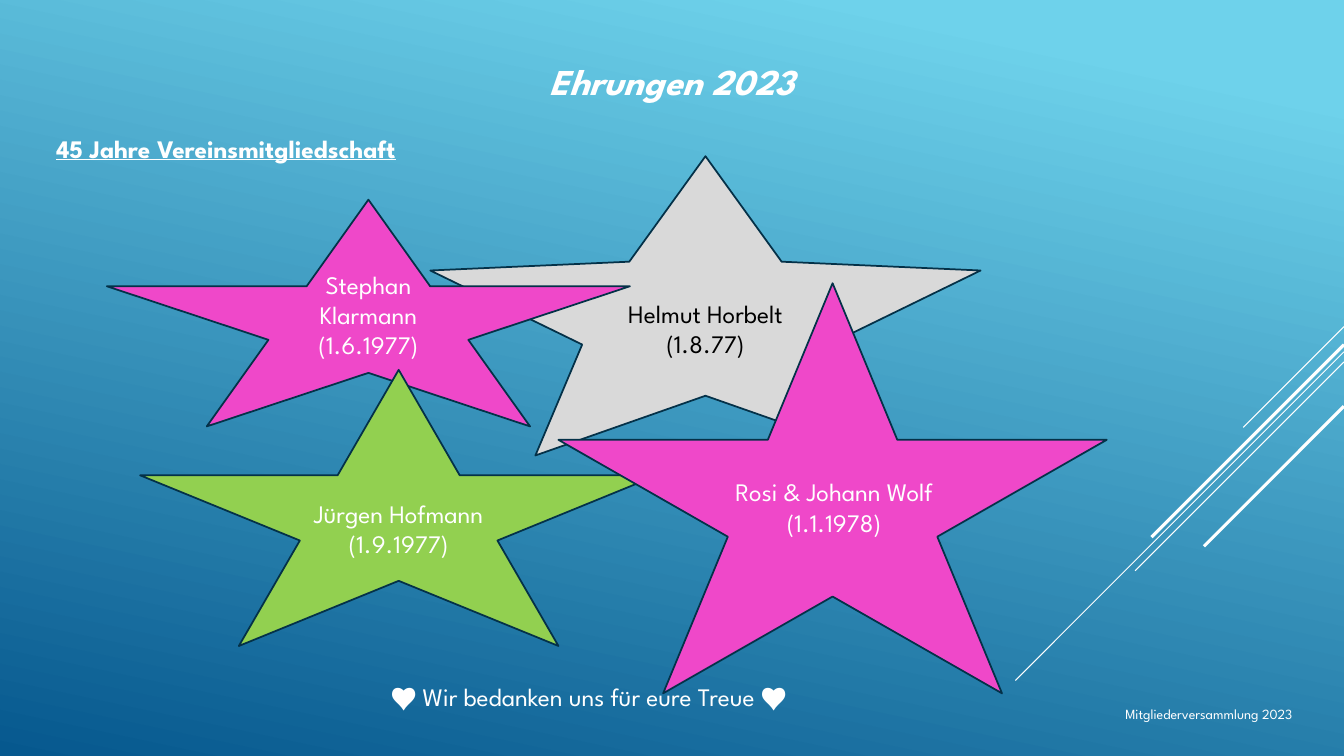
from dataclasses import dataclass

import pptx
import pptx.dml.color
import pptx.enum.shapes
import pptx.enum.text
import pptx.oxml
import pptx.util

Pt = pptx.util.Pt
Align = pptx.enum.text.PP_ALIGN
Anchor = pptx.enum.text.MSO_ANCHOR
Fit = pptx.enum.text.MSO_AUTO_SIZE

FONT = "League Spartan"
WHITE, BLACK, NAVY = "FFFFFF", "000000", "043148"
PINK, GREEN, GREY = "EF48C9", "92D050", "D9D9D9"
WIDE, HIGH = 960, 540


@dataclass
class Ray:
    top: float
    run: float
    width: float


@dataclass
class Star:
    box: tuple[float, float, float, float]
    fill: str
    text: str = ""
    ink: str = WHITE
    adj: float = 0.191
    lift: float = 0


@dataclass
class Label:
    box: tuple[float, float, float, float]
    text: str
    size: float = 18
    align: Align = Align.CENTER
    bold: bool = False
    slant: bool = False
    under: bool = False
    wrap: bool = True
    grow: bool = True


RAYS = [
    Ray(233.3, 72, 0.75),
    Ray(251.3, 234.7, 0.75),
    Ray(258.5, 149.2, 0.75),
    Ray(246.2, 137.5, 2.25),
    Ray(290.2, 100, 2.25),
]

STARS = [
    Star((307.4, 111.6, 393.1, 213.8), GREY, "Helmut Horbelt (1.8.77)", BLACK, adj=0.224),
    Star((76.3, 142.6, 373.7, 162), PINK, "Stephan Klarmann\n(1.6.1977)", lift=21.6),
    Star((100.1, 264.2, 369.4, 197.3), GREEN, "Jürgen Hofmann\n(1.9.1977)"),
    Star((398.9, 202.3, 391.7, 293), PINK),
]

LABELS = [
    Label((491, 337, 209.5, 51), "Rosi & Johann Wolf\n(1.1.1978)"),
    Label((255.6, 483.1, 329.8, 29), "♥ Wir bedanken uns für eure Treue ♥", wrap=False),
    Label((239.8, 38.9, 481, 39), "Ehrungen 2023", 26, bold=True, slant=True),
    Label((33.1, 91.4, 481, 29), "45 Jahre Vereinsmitgliedschaft",
          align=Align.LEFT, bold=True, under=True),
    Label((336.2, 500.4, 594, 29), "Mitgliederversammlung 2023", 10,
          align=Align.RIGHT, grow=False),
]


def tint(part, color: str) -> None:
    part.rgb = pptx.dml.color.RGBColor.from_string(color)


def write(frame, text: str, size: float, color: str, align: Align,
          bold: bool = False, slant: bool = False, under: bool = False) -> None:
    frame.text = text
    for par in frame.paragraphs:
        par.alignment = align
        for run in par.runs:
            font = run.font
            font.name, font.size = FONT, Pt(size)
            font.bold, font.italic, font.underline = bold, slant, under
            tint(font.color, color)


def paint(slide) -> None:
    fill = slide.background.fill
    fill.gradient()
    fill.gradient_angle = 258
    for stop, (pos, color) in zip(fill.gradient_stops, [(0.1, "6ED2EB"), (1, "06588E")]):
        stop.position = pos
        tint(stop.color, color)


def draw_ray(slide, ray: Ray) -> None:
    # Every ray falls at 45 degrees from the right edge
    line = slide.shapes.add_connector(
        pptx.enum.shapes.MSO_CONNECTOR.STRAIGHT,
        Pt(WIDE), Pt(ray.top), Pt(WIDE - ray.run), Pt(ray.top + ray.run))
    line.line.width = Pt(ray.width)
    tint(line.line.color, WHITE)
    props = line._element.spPr
    props.append(pptx.oxml.parse_xml(
        '<a:effectLst xmlns:a="http://schemas.openxmlformats.org/drawingml/2006/main"/>'))


def draw_star(slide, star: Star) -> None:
    shape = slide.shapes.add_shape(
        pptx.enum.shapes.MSO_SHAPE.STAR_5_POINT, *map(Pt, star.box))
    shape.shadow.inherit = False
    shape.adjustments[0] = star.adj
    shape.fill.solid()
    tint(shape.fill.fore_color, star.fill)
    shape.line.width = Pt(1.25)
    tint(shape.line.color, NAVY)
    if star.text:
        frame = shape.text_frame
        frame.word_wrap = True
        frame.vertical_anchor = Anchor.MIDDLE
        frame.margin_bottom = Pt(3.6 + star.lift)
        write(frame, star.text, 18, star.ink, Align.CENTER)


def draw_label(slide, label: Label) -> None:
    frame = slide.shapes.add_textbox(*map(Pt, label.box)).text_frame
    frame.word_wrap = label.wrap
    frame.auto_size = Fit.SHAPE_TO_FIT_TEXT if label.grow else Fit.NONE
    write(frame, label.text, label.size, WHITE, label.align,
          label.bold, label.slant, label.under)


def main() -> None:
    deck = pptx.Presentation()
    deck.slide_width, deck.slide_height = Pt(WIDE), Pt(HIGH)
    slide = deck.slides.add_slide(deck.slide_layouts[6])

    # Backdrop
    paint(slide)
    for ray in RAYS:
        draw_ray(slide, ray)

    # Honoured members
    for star in STARS:
        draw_star(slide, star)

    # Title, captions and footer
    for label in LABELS:
        draw_label(slide, label)

    deck.save("out.pptx")


if __name__ == "__main__":
    main()
